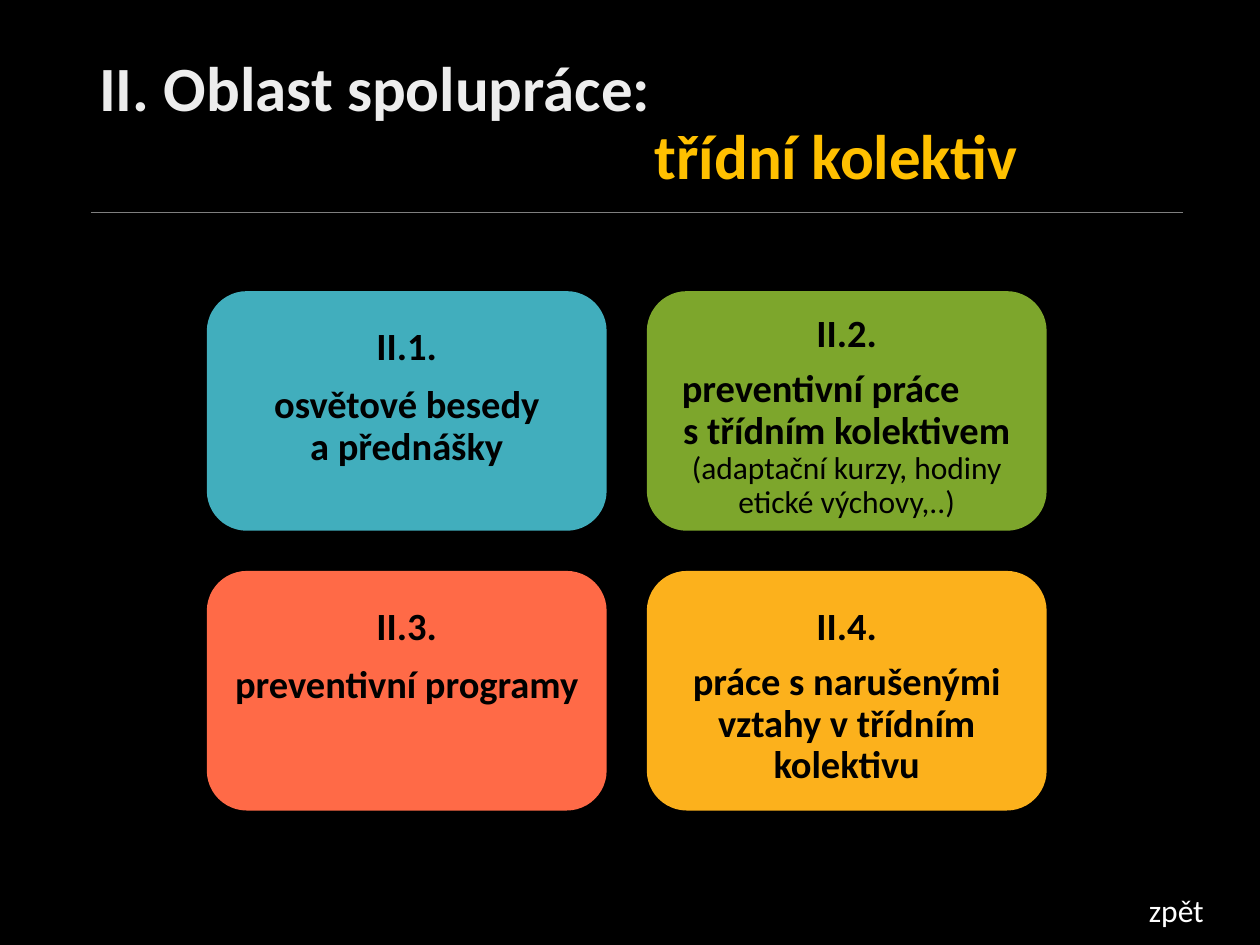
from pptx import Presentation
from pptx import util as u
from pptx.dml.color import RGBColor
from pptx.enum import shapes, text
from lxml import etree

COLORS = {
    "background": "000000", "title": "EDEDED", "accent": "FFC000",
    "rule": "7F7F7F", "dark": "000000", "light": "FFFFFF",
    "teal": "41AEBD", "green": "7DA62C", "coral": "FF6A47", "amber": "FCB11C",
}
DRAWING_NS = "http://schemas.openxmlformats.org/drawingml/2006/main"


def color(name):
    return RGBColor.from_string(COLORS[name])


def write(paragraph, content, size=22, bold=True, ink="dark", font="Calibri",
          align=text.PP_ALIGN.CENTER, spacing=0.9, after=0, indent=0):
    """Put formatted text into a paragraph."""
    if indent:
        paragraph._p.get_or_add_pPr().set("marL", str(int(u.Cm(indent))))
    paragraph.alignment = align
    paragraph.line_spacing = spacing
    paragraph.space_after = u.Pt(after)
    run = paragraph.add_run()
    run.text = content
    run.font.name, run.font.size, run.font.bold = font, u.Pt(size), bold
    run.font.color.rgb = color(ink)


class SlideBuilder:
    """Holds the current slide and draws its elements in one style."""

    def __init__(self, slide):
        self.slide = slide
        slide.background.fill.solid()
        slide.background.fill.fore_color.rgb = color("background")

    def fill_text(self, shape, lines, top=0.13):
        frame = shape.text_frame
        frame.word_wrap = True
        frame.vertical_anchor = text.MSO_ANCHOR.TOP
        frame.margin_top = u.Cm(top)
        for number, (content, style) in enumerate(lines):
            paragraph = frame.add_paragraph() if number else frame.paragraphs[0]
            write(paragraph, content, **style)

    def text_box(self, left, top, width, height, lines):
        box = self.slide.shapes.add_textbox(*map(u.Cm, (left, top, width, height)))
        self.fill_text(box, lines)

    def rule(self, left, right, top):
        line = self.slide.shapes.add_connector(
            shapes.MSO_CONNECTOR.STRAIGHT, *map(u.Cm, (left, top, right, top)))
        line.line.color.rgb = color("rule")
        line.line.width = u.Pt(0.5)
        etree.SubElement(line._element.spPr, f"{{{DRAWING_NS}}}effectLst")

    def card(self, left, top, width, height, fill, lines, inset):
        card = self.slide.shapes.add_shape(
            shapes.MSO_SHAPE.FLOWCHART_ALTERNATE_PROCESS,
            *map(u.Cm, (left, top, width, height)))
        card.shadow.inherit = False
        card.fill.solid()
        card.fill.fore_color.rgb = color(fill)
        card.line.fill.background()
        card.text_frame.margin_left = card.text_frame.margin_right = u.Cm(0.23)
        self.fill_text(card, lines, inset)


def main():
    presentation = Presentation()
    presentation.slide_width, presentation.slide_height = u.Cm(25.4), u.Cm(19.05)
    builder = SlideBuilder(presentation.slides.add_slide(presentation.slide_layouts[6]))
    left = text.PP_ALIGN.LEFT

    # Title and rule
    builder.text_box(1.75, 1.02, 21.9, 3.68, [
        ("II. Oblast spolupráce:", dict(size=36, ink="title", align=left)),
        ("třídní kolektiv", dict(size=36, ink="accent", align=left, indent=11.2)),
    ])
    builder.rule(1.83, 23.85, 4.29)

    # Cards: fill, top inset, lines
    cards = [
        ("teal", 0.5, [("II.1.", dict(after=9.2)),
                       ("osvětové besedy", {}), ("a přednášky", {})]),
        ("green", 0.23, [("II.2.", dict(after=7.7)),
                         ("preventivní práce", dict(align=left, indent=0.24)),
                         ("s třídním kolektivem", {}),
                         ("(adaptační kurzy, hodiny etické výchovy,..)",
                          dict(size=18, bold=False))]),
        ("coral", 0.5, [("II.3.", dict(after=9.2)), ("preventivní programy", {})]),
        ("amber", 0.5, [("II.4.", dict(after=7.7)),
                        ("práce s narušenými vztahy v třídním kolektivu", {})]),
    ]
    width, height, gap = 8.06, 4.83, 0.81
    for number, (fill, inset, lines) in enumerate(cards):
        row, column = divmod(number, 2)
        builder.card(4.17 + column * (width + gap), 5.87 + row * (height + gap),
                     width, height, fill, lines, inset)

    # Back label
    builder.text_box(22.91, 17.83, 2.01, 1.02, [
        ("zpět", dict(size=18, bold=False, ink="light", align=left, spacing=1.0))])

    presentation.save("out.pptx")


if __name__ == "__main__":
    main()
